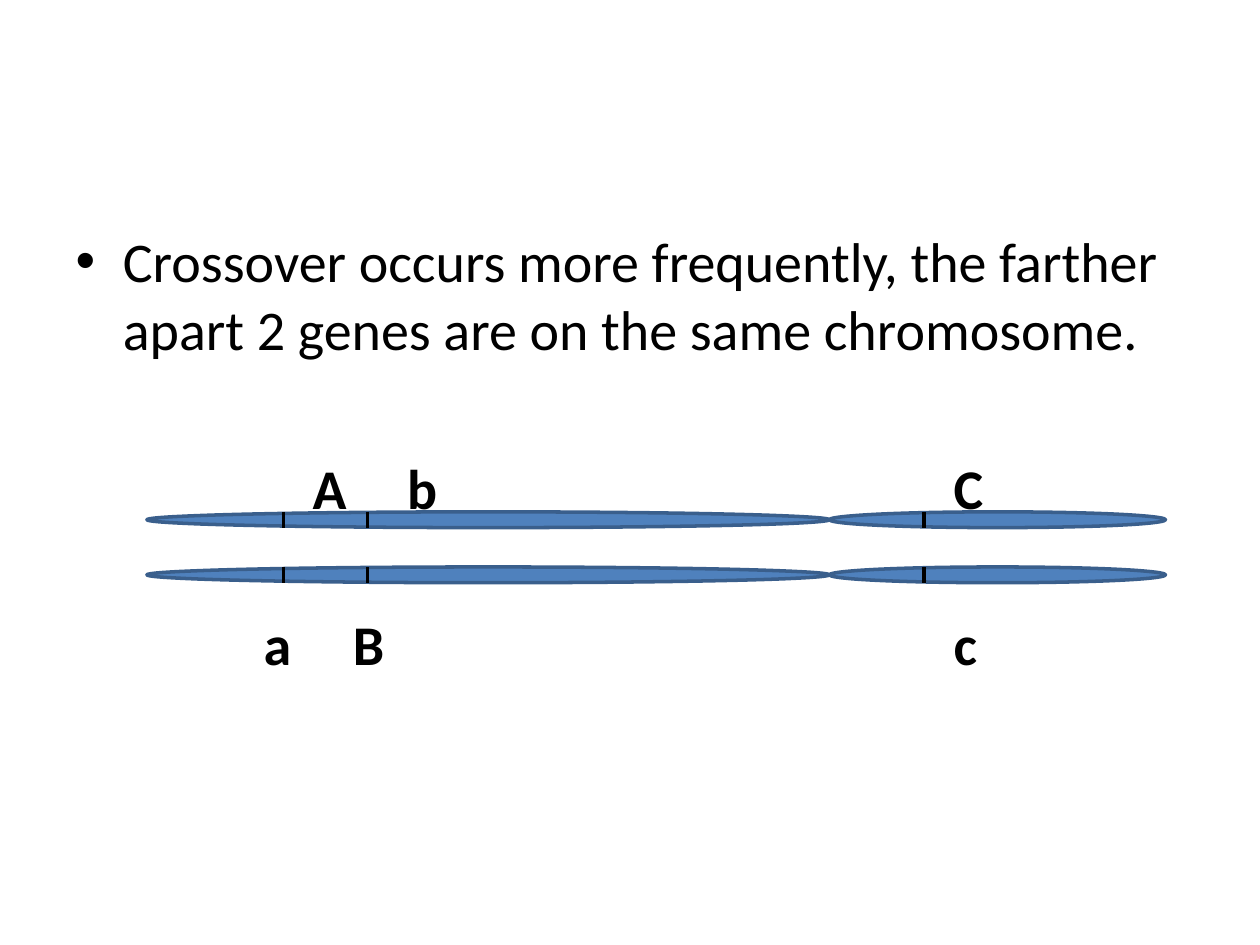
"""Build a slide on crossover frequency between genes on paired chromosomes."""
from pptx import Presentation
from pptx import util as u
from pptx.dml.color import RGBColor
from pptx.enum import shapes, text
from pptx.oxml.ns import qn
from lxml import etree

STATEMENT = "Crossover occurs more frequently, the farther apart 2 genes are on the same chromosome."
COLORS = {"ink": "000000", "arm": "4F81BD", "edge": "3A5F8C"}
ARMS = [(84, 390), (474, 192)]
LOCI = [162, 210, 528]
CHROMOSOMES = [
    {"top": 292.5, "label_top": 259.2, "alleles": [("A", 178.7), ("b", 232.7), ("C", 545)]},
    {"top": 324, "label_top": 348.4, "alleles": [("a", 150.7), ("B", 201.7), ("c", 545)]},
]
THICKNESS = 9


def color(name):
    return RGBColor.from_string(COLORS[name])


def write(frame, words, size=32, bold=False, ink="ink"):
    span = frame.paragraphs[0].add_run()
    span.text = words
    span.font.name = "Calibri"
    span.font.size = u.Pt(size)
    span.font.bold = bold
    span.font.color.rgb = color(ink)


def add_arm(page, left, top, width):
    arm = page.shapes.add_shape(
        shapes.MSO_SHAPE.OVAL, u.Pt(left), u.Pt(top), u.Pt(width), u.Pt(THICKNESS))
    arm.shadow.inherit = False
    arm.fill.solid()
    arm.fill.fore_color.rgb = color("arm")
    arm.line.color.rgb = color("edge")
    arm.line.width = u.Pt(2)


def add_locus(page, left, top):
    locus = page.shapes.add_connector(
        shapes.MSO_CONNECTOR.STRAIGHT, u.Pt(left), u.Pt(top), u.Pt(left), u.Pt(top + THICKNESS))
    locus.line.color.rgb = color("ink")
    locus.line.width = u.Pt(2.25)
    etree.SubElement(locus._element.spPr, qn("a:effectLst"))


def add_allele(page, letter, left, top):
    box = page.shapes.add_textbox(u.Pt(left), u.Pt(top), u.Pt(30), u.Pt(39))
    frame = box.text_frame
    frame.word_wrap = True
    frame.auto_size = text.MSO_AUTO_SIZE.NONE
    frame.margin_left = frame.margin_right = frame.margin_top = frame.margin_bottom = 0
    write(frame, letter, bold=True)


def main():
    deck = Presentation()
    deck.slide_width, deck.slide_height = u.Pt(720), u.Pt(540)
    page = deck.slides.add_slide(deck.slide_layouts[1])
    title = page.shapes.title
    title._element.getparent().remove(title._element)
    body = page.placeholders[1]
    body.left, body.top, body.width, body.height = u.Pt(36), u.Pt(126), u.Pt(648), u.Pt(356.4)
    write(body.text_frame, STATEMENT)

    for chromosome in CHROMOSOMES:
        for left, width in ARMS:
            add_arm(page, left, chromosome["top"], width)
        for left in LOCI:
            add_locus(page, left, chromosome["top"])
        for letter, left in chromosome["alleles"]:
            add_allele(page, letter, left, chromosome["label_top"])
    deck.save("out.pptx")


if __name__ == "__main__":
    main()
